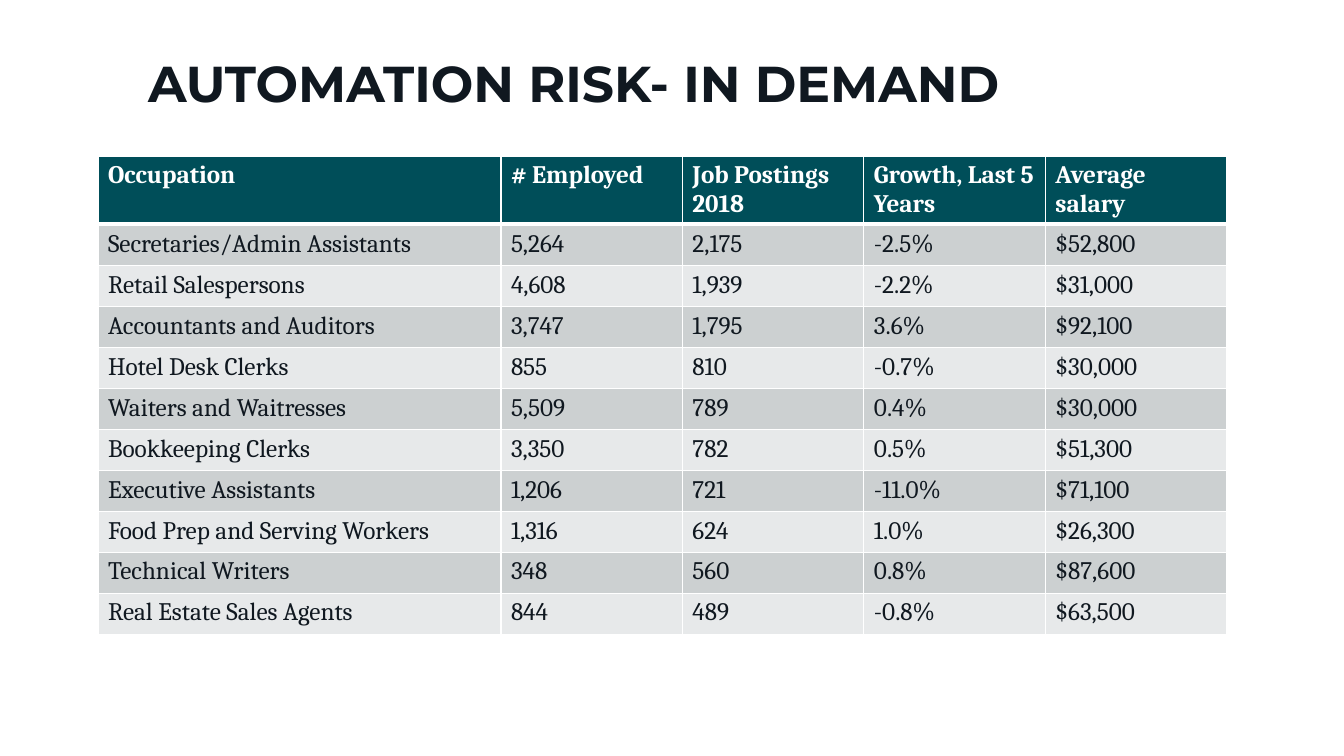
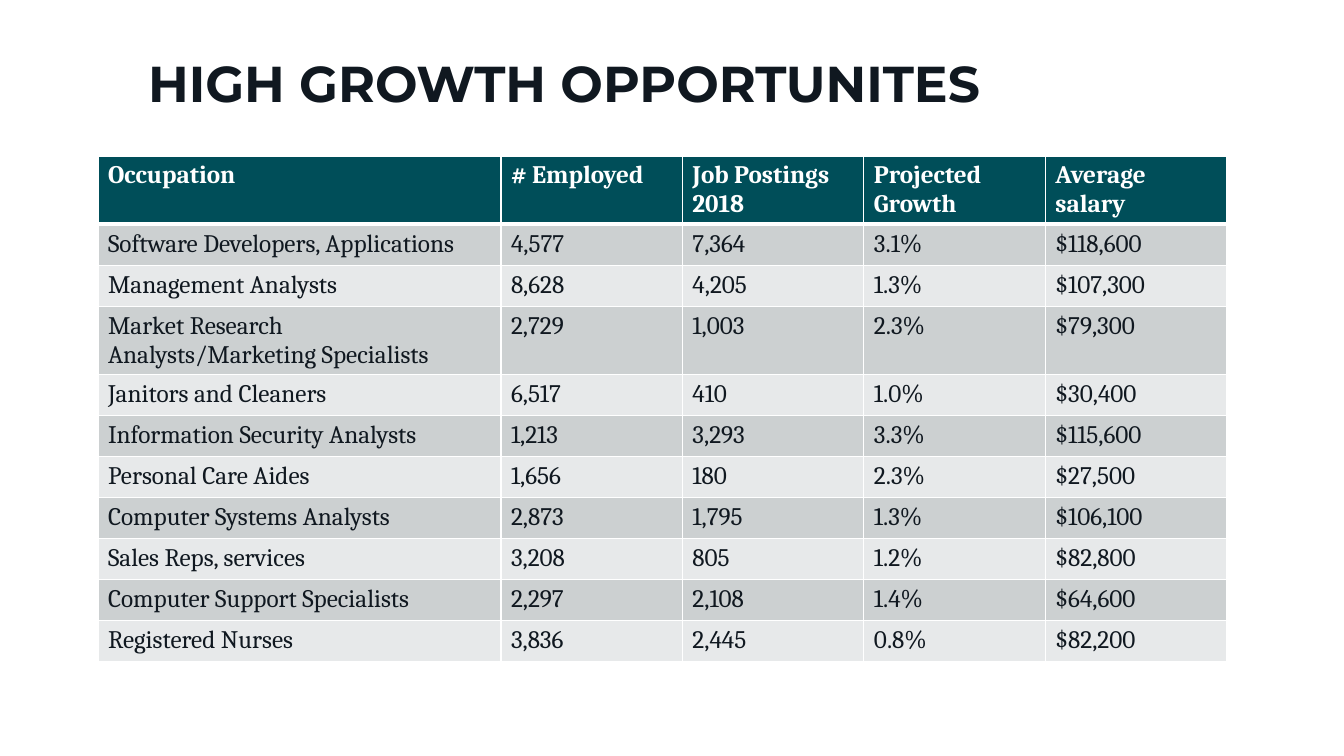
from lxml import etree
from pptx import Presentation
from pptx.dml.color import RGBColor
from pptx.enum import text
from pptx.oxml import ns
from pptx.util import Pt

EMU_PER_PX = 914400 / 100.8
SLIDE_SIZE = (1344, 756)
TITLE_BOX = (138, -13, 1068, 131)
TABLE_BOX = (98, 156, 1129)
FIRST_COL = 403
ROW_HEIGHT, TALL_ROW = 41, 68
WRAP_LENGTH = 40

INK, WHITE, TEAL = "101820", "FFFFFF", "004E59"
BANDS = ("CCD0D1", "E7E9EA")
TITLE_FONT, BODY_FONT = "Montserrat", "Cambria"

RISK_ROWS = [
    ("Occupation", "# Employed", "Job Postings 2018", "Growth, Last 5 Years", "Average salary"),
    ("Secretaries/Admin Assistants", "5,264", "2,175", "-2.5%", "$52,800"),
    ("Retail Salespersons", "4,608", "1,939", "-2.2%", "$31,000"),
    ("Accountants and Auditors", "3,747", "1,795", "3.6%", "$92,100"),
    ("Hotel Desk Clerks", "855", "810", "-0.7%", "$30,000"),
    ("Waiters and Waitresses", "5,509", "789", "0.4%", "$30,000"),
    ("Bookkeeping Clerks", "3,350", "782", "0.5%", "$51,300"),
    ("Executive Assistants", "1,206", "721", "-11.0%", "$71,100"),
    ("Food Prep and Serving Workers", "1,316", "624", "1.0%", "$26,300"),
    ("Technical Writers", "348", "560", "0.8%", "$87,600"),
    ("Real Estate Sales Agents", "844", "489", "-0.8%", "$63,500"),
]
GROWTH_ROWS = [
    ("Occupation", "# Employed", "Job Postings 2018", "Projected Growth", "Average salary"),
    ("Software Developers, Applications", "4,577", "7,364", "3.1%", "$118,600"),
    ("Management Analysts", "8,628", "4,205", "1.3%", "$107,300"),
    ("Market Research Analysts/Marketing Specialists", "2,729", "1,003", "2.3%", "$79,300"),
    ("Janitors and Cleaners", "6,517", "410", "1.0%", "$30,400"),
    ("Information Security Analysts", "1,213", "3,293", "3.3%", "$115,600"),
    ("Personal Care Aides", "1,656", "180", "2.3%", "$27,500"),
    ("Computer Systems Analysts", "2,873", "1,795", "1.3%", "$106,100"),
    ("Sales Reps, services", "3,208", "805", "1.2%", "$82,800"),
    ("Computer Support Specialists", "2,297", "2,108", "1.4%", "$64,600"),
    ("Registered Nurses", "3,836", "2,445", "0.8%", "$82,200"),
]


def px(n):
    return round(n * EMU_PER_PX)


def color(value):
    return RGBColor.from_string(value)


def set_font(p, name, size, value, bold):
    p.font.name, p.font.size, p.font.bold = name, Pt(size), bold
    p.font.color.rgb = color(value)


def add_borders(cell, top, bottom):
    tc_pr = cell._tc.get_or_add_tcPr()
    for side, width in (("L", 1), ("R", 1), ("T", top), ("B", bottom)):
        ln = etree.SubElement(tc_pr, ns.qn(f"a:ln{side}"), w=str(Pt(width)))
        fill = etree.SubElement(ln, ns.qn("a:solidFill"))
        etree.SubElement(fill, ns.qn("a:srgbClr"), val=WHITE)


def format_cell(cell, value, row):
    header = row == 0
    add_borders(cell, 3 if row == 1 else 1, 3 if header else 1)
    cell.fill.solid()
    cell.fill.fore_color.rgb = color(TEAL if header else BANDS[(row - 1) % 2])
    cell.text = value
    set_font(cell.text_frame.paragraphs[0], BODY_FONT, 18, WHITE if header else INK, header)


def place_title(s, box, value):
    sp = s.shapes.title
    sp.left, sp.top, sp.width, sp.height = map(px, box)
    tf = sp.text_frame
    tf.text = value
    tf.auto_size = text.MSO_AUTO_SIZE.NONE
    tf.vertical_anchor = text.MSO_ANCHOR.BOTTOM
    p = tf.paragraphs[0]
    p.alignment = text.PP_ALIGN.LEFT
    set_font(p, TITLE_FONT, 36, INK, True)


def place_table(s, box, rows):
    left, top, width = box
    cols = len(rows[0])
    heights = [TALL_ROW if i == 0 or len(row[0]) > WRAP_LENGTH else ROW_HEIGHT
               for i, row in enumerate(rows)]
    table = s.shapes.add_table(len(rows), cols, px(left), px(top),
                               px(width), px(sum(heights))).table
    for i, col in enumerate(table.columns):
        col.width = px((width - FIRST_COL) / (cols - 1) if i else FIRST_COL)
    for i, row in enumerate(rows):
        table.rows[i].height = px(heights[i])
        for j, value in enumerate(row):
            format_cell(table.cell(i, j), value, i)


def add_table_slide(prs, title, rows):
    s = prs.slides.add_slide(prs.slide_layouts[5])
    place_title(s, TITLE_BOX, title)
    place_table(s, TABLE_BOX, rows)


def main():
    prs = Presentation()
    prs.slide_width, prs.slide_height = map(px, SLIDE_SIZE)
    add_table_slide(prs, "AUTOMATION RISK- IN DEMAND", RISK_ROWS)
    add_table_slide(prs, "HIGH GROWTH OPPORTUNITES", GROWTH_ROWS)
    prs.save("out.pptx")


if __name__ == "__main__":
    main()
